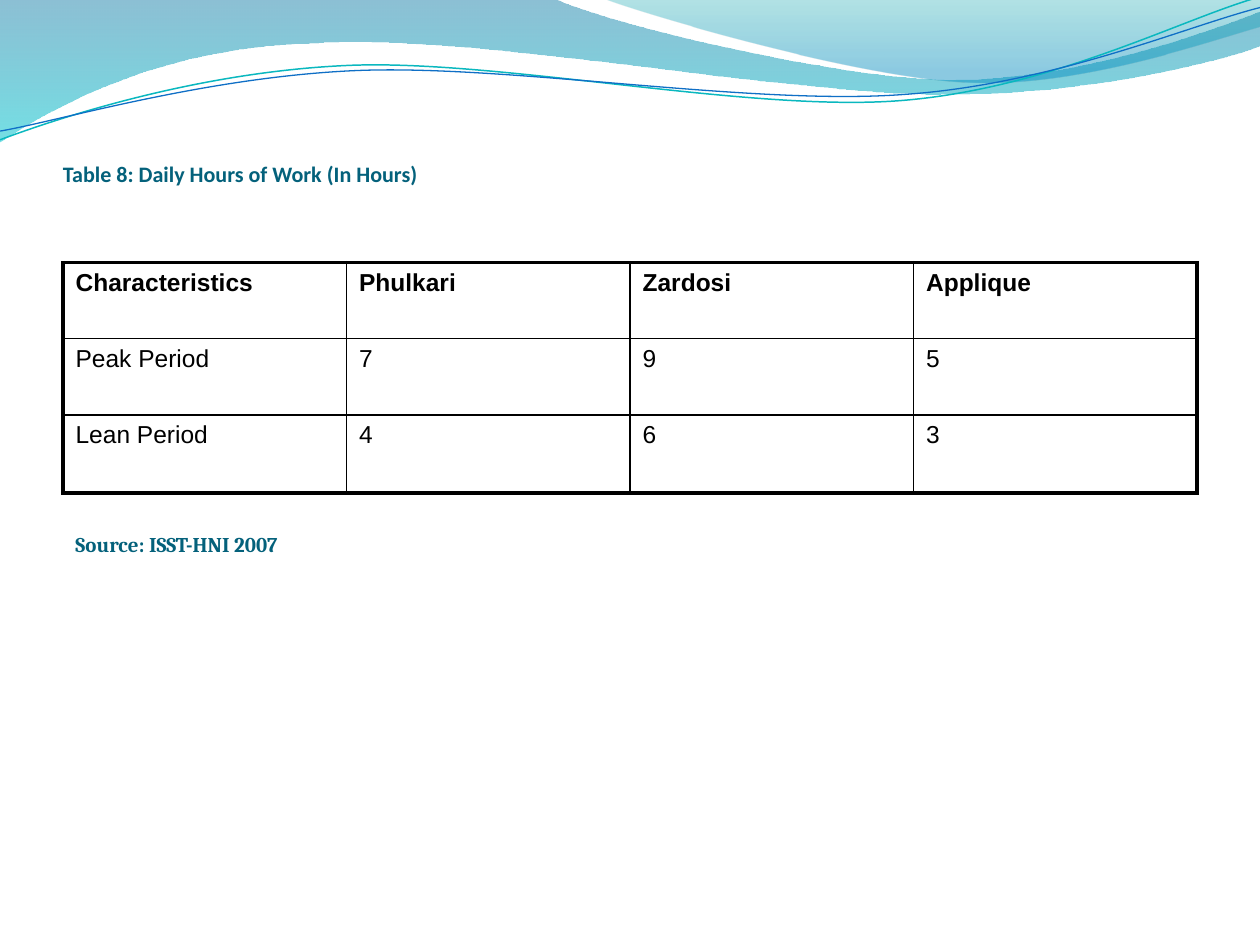
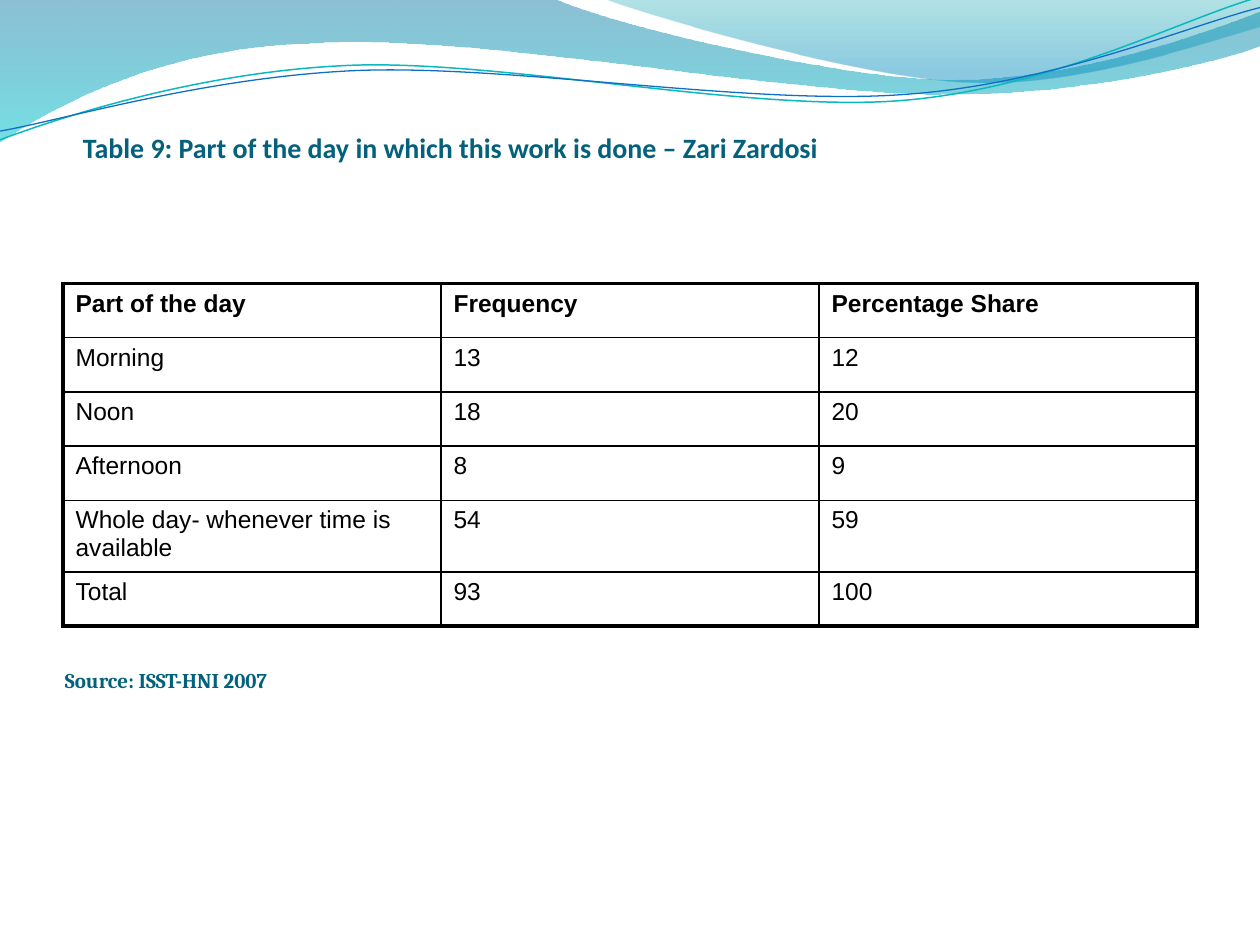
from lxml.etree import SubElement
from pptx import Presentation
from pptx.dml.color import RGBColor
from pptx.enum.text import MSO_ANCHOR, MSO_AUTO_SIZE
from pptx.oxml.ns import qn
from pptx.util import Pt

WIDTH, HEIGHT = 720, 540
MARGIN = 36
CONTENT_W = WIDTH - 2 * MARGIN
INK, BLACK = "04617B", "000000"
OUTER_LINE, INNER_LINE = 2.25, 1

# Each wave is a start point, then lines (x, y) and cubic curves (three points).
RIBBON = [(0, 0), (316.8, -0.7),
          (342.7, 12.2, 478.1, 45.4, 545.8, 45.4),
          (614.2, 45.4, 689.8, 18.7, 720, 6.5), (720.7, 25.9),
          (707.8, 31.7, 626.4, 54.7, 537.1, 54),
          (447.8, 54, 275, 20.2, 185, 24.5),
          (92.9, 25.9, 33.1, 59.8, -0.7, 81.4), (0, 0)]
CREST = [(344.9, -0.7), (366.5, 7.9, 491, 44.6, 553.7, 46.8),
         (616.3, 49.7, 691.9, 23, 720, 15.1), (720, 0), (344.9, -0.7)]
GREEN_LINE = [(0, 79.9), (34.6, 67, 113.8, 41, 199.4, 37.4),
              (284.4, 33.8, 427, 64.1, 513.4, 57.6),
              (599.8, 51.1, 675.4, 10.8, 718.6, -1.4)]
BLUE_LINE = [(0, 74.9), (33.8, 69.1, 118.1, 43.9, 203.8, 40.3),
             (290.2, 36.7, 429.8, 60.5, 516.2, 54),
             (601.9, 48.2, 677.5, 15.1, 720, 4.3)]


def rgb(color):
    return RGBColor.from_string(color)


class Deck:
    """Holds the presentation, its style and the current slide."""

    def __init__(self):
        self.prs = Presentation()
        self.prs.slide_width, self.prs.slide_height = Pt(WIDTH), Pt(HEIGHT)
        self.slide = None

    def new_slide(self):
        self.slide = self.prs.slides.add_slide(self.prs.slide_layouts[6])
        self.wave_fill(RIBBON, [(0, "0074A1", 45), (1, "00C6CF", 55)])
        self.wave_fill(CREST, [(0, "00A1A9", 30), (0.8, "008BBF", 45)])
        self.wave_line(GREEN_LINE, "0AB8BF", 0.85)
        self.wave_line(BLUE_LINE, "0F6FC6", 0.75)

    def freeform(self, path, close):
        """Build the outline through all points, then join each curve's three into one Bézier."""
        points = [(Pt(x), Pt(y)) for seg in path for x, y in zip(seg[::2], seg[1::2])]
        builder = self.slide.shapes.build_freeform(*points[0])
        builder.add_line_segments(points[1:], close=close)
        sp = builder.convert_to_shape()
        sp.shadow.inherit = False
        lines = iter(list(sp._element.iter(qn("a:lnTo"))))
        for seg in path[1:]:
            parts = [next(lines) for _ in seg[::2]]
            if len(parts) == 3:
                curve = parts[0].makeelement(qn("a:cubicBezTo"))
                parts[0].addprevious(curve)
                for part in parts:
                    curve.append(part[0])
                    part.getparent().remove(part)
        return sp

    def wave_fill(self, path, stops):
        """Fill a closed wave from top to bottom; stops are position, colour, opacity %."""
        sp = self.freeform(path, True)
        sp.line.fill.background()
        sp.fill.gradient()
        sp.fill.gradient_angle = 270
        for stop, (position, color, _) in zip(sp.fill.gradient_stops, stops):
            stop.position = position
            stop.color.rgb = rgb(color)
        for clr, (_, _, opacity) in zip(sp._element.iter(qn("a:srgbClr")), stops):
            SubElement(clr, qn("a:alpha"), val=str(opacity * 1000))

    def wave_line(self, path, color, width):
        sp = self.freeform(path, False)
        sp.fill.background()
        sp.line.color.rgb = rgb(color)
        sp.line.width = Pt(width)

    def text(self, text, box, size, font):
        """Add bold text in the ink colour and return its text frame."""
        tf = self.slide.shapes.add_textbox(*map(Pt, box)).text_frame
        p = tf.paragraphs[0]
        p.text = text
        self.set_font(p, size, font, INK, True)
        return tf

    def set_font(self, p, size, name, color, bold):
        p.font.size, p.font.name, p.font.bold = Pt(size), name, bold
        p.font.color.rgb = rgb(color)

    def title(self, text, top, height, size, indent, raise_by):
        tf = self.text(text, (MARGIN, top, CONTENT_W, height), size, "Calibri")
        tf.word_wrap = True
        tf.vertical_anchor = MSO_ANCHOR.BOTTOM
        tf.margin_left, tf.margin_bottom = Pt(indent), Pt(raise_by)
        tf.margin_top = tf.margin_right = 0

    def source(self, left, top):
        tf = self.text("Source: ISST-HNI 2007", (left, top, 141, 21.6), 12, "Cambria")
        tf.word_wrap = False
        tf.auto_size = MSO_AUTO_SIZE.SHAPE_TO_FIT_TEXT

    def table(self, top, rows, heights):
        n_rows, n_cols = len(rows), len(rows[0])
        table = self.slide.shapes.add_table(
            n_rows, n_cols, Pt(MARGIN), Pt(top), Pt(CONTENT_W), Pt(sum(heights))).table
        table.first_row = table.horz_banding = False
        for r, (values, height) in enumerate(zip(rows, heights)):
            table.rows[r].height = Pt(height)
            for c, value in enumerate(values):
                cell = table.cell(r, c)
                p = cell.text_frame.paragraphs[0]
                p.text = value
                self.set_font(p, 14, "Arial", BLACK, r == 0)
                self.borders(cell, {"L": c == 0, "R": c == n_cols - 1,
                                    "T": r == 0, "B": r == n_rows - 1})
                cell.fill.background()

    def borders(self, cell, outer_sides):
        tc_pr = cell._tc.get_or_add_tcPr()
        for side, outer in outer_sides.items():
            width = Pt(OUTER_LINE if outer else INNER_LINE)
            ln = SubElement(tc_pr, qn(f"a:ln{side}"), w=str(width))
            fill = SubElement(ln, qn("a:solidFill"))
            SubElement(fill, qn("a:srgbClr"), val=BLACK)


def main():
    deck = Deck()

    deck.new_slide()
    deck.title("Table 8: Daily Hours of Work (In Hours)", 90, 21.6, 12.6, 0, 4.6)
    deck.table(150, [
        ["Characteristics", "Phulkari", "Zardosi", "Applique"],
        ["Peak Period", "7", "9", "5"],
        ["Lean Period", "4", "6", "3"],
    ], [43.4, 43.8, 44.6])
    deck.source(MARGIN, 300)

    deck.new_slide()
    deck.title("Table 9: Part of the day in which this work is done – Zari Zardosi",
               21.6, 90, 16, 11.4, 17.8)
    deck.table(162, [
        ["Part of the day", "Frequency", "Percentage Share"],
        ["Morning", "13", "12"],
        ["Noon", "18", "20"],
        ["Afternoon", "8", "9"],
        ["Whole day- whenever time is available", "54", "59"],
        ["Total", "93", "100"],
    ], [31] * 6)
    deck.source(30, 378)

    deck.prs.save("out.pptx")


if __name__ == "__main__":
    main()
